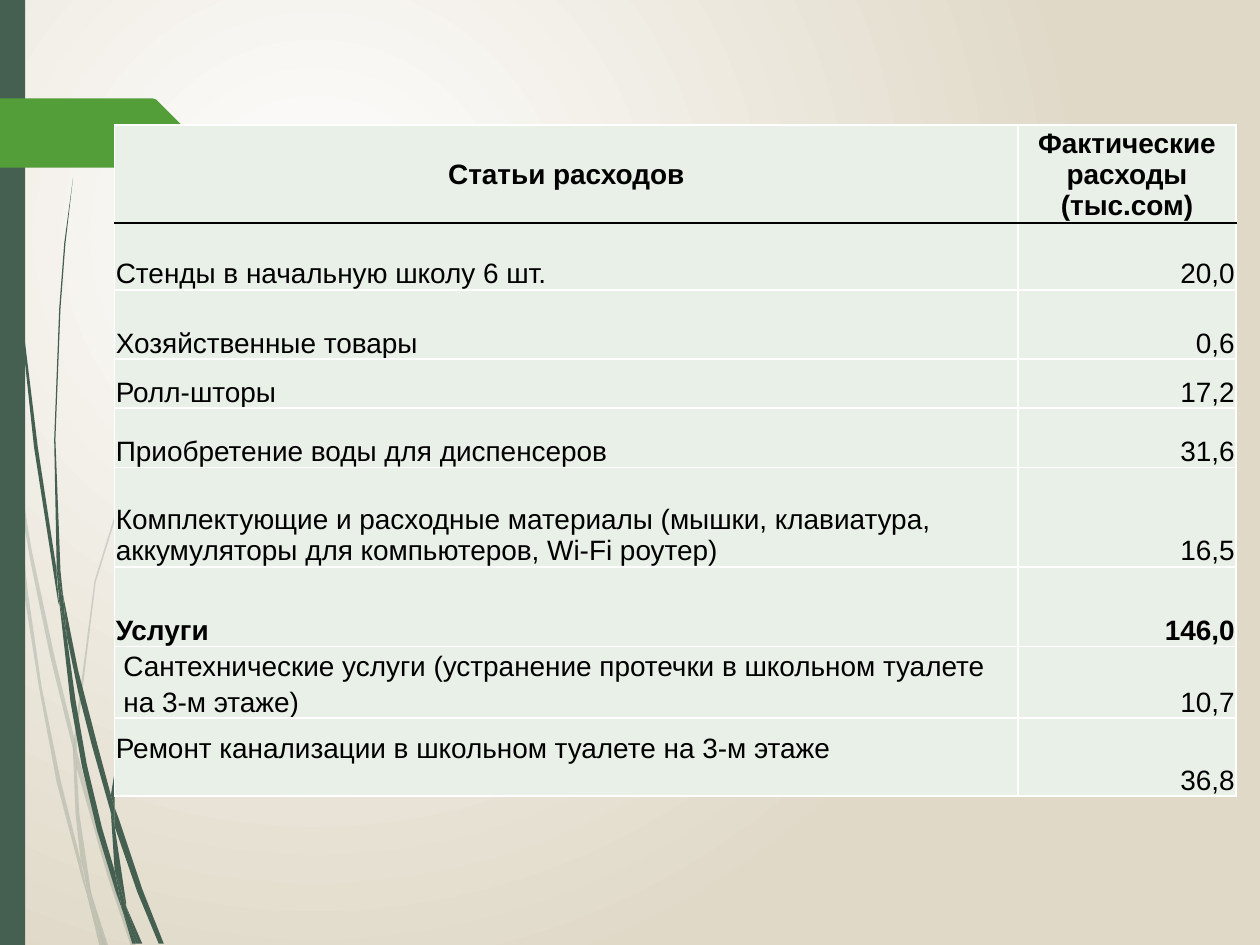
"""Builds a school expense table on a slide decorated with grass blades."""
from lxml import etree
from pptx import Presentation
from pptx.dml.color import RGBColor
from pptx.enum.shapes import MSO_SHAPE
from pptx.enum.text import MSO_ANCHOR, PP_ALIGN
from pptx.oxml.ns import qn
from pptx.util import Inches, Pt

RECTANGLE = MSO_SHAPE.RECTANGLE
MIDDLE, BOTTOM = MSO_ANCHOR.MIDDLE, MSO_ANCHOR.BOTTOM
LEFT, CENTER, RIGHT = PP_ALIGN.LEFT, PP_ALIGN.CENTER, PP_ALIGN.RIGHT
WHITE = RGBColor(0xFF, 0xFF, 0xFF)
BLACK = RGBColor(0x00, 0x00, 0x00)
SAND = RGBColor(0xE0, 0xD9, 0xC8)
PINE = RGBColor(0x45, 0x5F, 0x51)
GREEN = RGBColor(0x54, 0x9E, 0x39)
MINT = RGBColor(0xE9, 0xF0, 0xE8)

PALE_BLADES = [
    [(0.08, 3.5), (0.06, 3.22), (0, 2.82), (0, 2.99), (0.07, 3.44)],
    [(0.4, 5.22), (0.59, 5.99), (0.59, 5.86), (0.43, 5.2), (0.25, 4.36),
     (0.1, 3.45), (0.12, 3.76), (0.25, 4.5)],
    [(0.64, 6.07), (0.61, 5.96), (0.61, 6.1), (0.85, 6.94), (1.04, 7.51),
     (1.08, 7.51), (0.88, 6.92)],
    [(0.83, 7.51), (0.86, 7.51), (0.73, 7.11)],
    [(0.64, 6.83), (0.48, 6.19), (0.33, 5.45), (0.22, 4.69), (0.12, 3.76),
     (0.08, 3.5), (0.19, 4.7), (0.31, 5.46), (0.45, 6.21), (0.64, 6.93),
     (0.7, 7.14), (0.69, 7.07)],
    [(0.58, 5.99), (0.6, 6.46), (0.64, 6.83), (0.67, 6.92), (0.73, 7.11),
     (0.72, 7.06), (0.63, 6.46), (0.61, 6.1), (0.61, 6.08)],
    [(0.61, 5.84), (0.76, 4.62), (1.11, 3.49), (1.59, 2.45), (1.87, 1.98),
     (2.01, 1.75), (2.17, 1.54), (2.17, 1.53), (2.01, 1.75), (1.86, 1.97),
     (1.58, 2.44), (1.1, 3.48), (0.75, 4.61), (0.59, 5.84), (0.59, 5.86),
     (0.61, 5.96)],
    [(0.7, 7.14), (0.79, 7.51), (0.82, 7.51)],
    [(0.61, 6.08), (0.61, 6.1), (0.61, 5.96), (0.59, 5.86), (0.58, 5.99)],
    [(0.67, 6.92), (0.65, 6.83), (0.69, 7.07), (0.7, 7.14), (0.82, 7.51),
     (0.83, 7.51), (0.73, 7.11)],
]
DARK_BLADES = [
    [(0.05, 1.1), (0.14, 2.33), (0.27, 3.55), (0.46, 4.77), (0.47, 4.81),
     (0.45, 4.57), (0.45, 4.53), (0.3, 3.55), (0.15, 2.32), (0.06, 1.09),
     (0.04, 0.48), (0.03, 0), (0.02, 0), (0.03, 0.48)],
    [(0.73, 5.92), (0.88, 6.45), (0.88, 6.33), (0.88, 6.31), (0.77, 5.9),
     (0.62, 5.32), (0.5, 4.72), (0.53, 5.05), (0.62, 5.49)],
    [(0.94, 6.49), (0.91, 6.41), (0.91, 6.56), (1.09, 7.08), (1.26, 7.49),
     (1.3, 7.49), (1.13, 7.06)],
    [(0.91, 6.91), (0.81, 6.57), (0.69, 6.07), (0.6, 5.56), (0.53, 5.05),
     (0.47, 4.77), (0.56, 5.57), (0.65, 6.08), (0.77, 6.59), (0.92, 7.08),
     (0.97, 7.22), (0.96, 7.17)],
    [(0.5, 4.72), (0.48, 4.53), (0.44, 3.49), (0.48, 2.45), (0.52, 1.93),
     (0.58, 1.41), (0.51, 1.93), (0.47, 2.45), (0.43, 3.49), (0.45, 4.49),
     (0.49, 4.72)],
    [(1.1, 7.49), (1.13, 7.49), (1, 7.19)],
    [(0.47, 4.77), (0.53, 5.05), (0.5, 4.72), (0.49, 4.72), (0.45, 4.49),
     (0.45, 4.53)],
    [(0.91, 6.33), (1.03, 5.52), (1.31, 4.76), (1.69, 4.06), (1.91, 3.74),
     (2.03, 3.59), (2.16, 3.44), (2.15, 3.44), (2.03, 3.58), (1.91, 3.73),
     (1.68, 4.05), (1.29, 4.74), (1.01, 5.51), (0.88, 6.31), (0.91, 6.41)],
    [(0.97, 7.22), (1.05, 7.49), (1.08, 7.49)],
    [(0.88, 6.45), (0.91, 6.91), (0.96, 7.06), (1, 7.19), (1, 7.16),
     (0.91, 6.56), (0.9, 6.51)],
    [(0.88, 6.45), (0.9, 6.51), (0.91, 6.56), (0.91, 6.41), (0.88, 6.31),
     (0.88, 6.33)],
    [(0.96, 7.06), (0.91, 6.91), (0.96, 7.17), (0.97, 7.22), (1.08, 7.49),
     (1.1, 7.49), (1, 7.19)],
]
ARROW_TAB = [(0, 0.78), (1.21, 0.78), (1.24, 0.79), (1.49, 1.04),
             (1.49, 1.07), (1.24, 1.32), (1.21, 1.33), (0, 1.33)]
EXPENSES = [
    ("Статьи расходов", "Фактические расходы (тыс.сом)"),
    ("Стенды в начальную школу 6 шт.", "20,0"),
    ("Хозяйственные товары", "0,6"),
    ("Ролл-шторы", "17,2"),
    ("Приобретение воды для диспенсеров", "31,6"),
    ("Комплектующие и расходные материалы (мышки, клавиатура, "
     "аккумуляторы для компьютеров, Wi-Fi роутер)", "16,5"),
    ("Услуги", "146,0"),
    ("Сантехнические услуги (устранение протечки в школьном туалете "
     "на 3-м этаже)", "10,7"),
    ("Ремонт канализации в школьном туалете на 3-м этаже", "36,8"),
]
COLUMN_WIDTHS = [7.17, 1.73]
ROW_HEIGHTS = [0.78, 0.53, 0.55, 0.39, 0.47, 0.79, 0.63, 0.57, 0.62]
BOLD_ROWS = (0, 6)
PLUMBING_ROW, SEWER_ROW = 7, 8


class SlideBuilder:
    def __init__(self, slide, font="Arial", size=16):
        self.slide, self.font, self.size = slide, font, size

    def background(self, inner, outer):
        fill = self.slide.background.fill
        fill.gradient()
        for stop, color in zip(fill.gradient_stops, (inner, outer)):
            stop.color.rgb = color
        gradient = self.slide.element.find(".//" + qn("a:gradFill"))
        for line in gradient.findall(qn("a:lin")):
            gradient.remove(line)
        circle = etree.SubElement(gradient, qn("a:path"), path="circle")
        etree.SubElement(circle, qn("a:fillToRect"),
                         l="50000", t="50000", r="100000", b="100000")

    def paint(self, shape, color, opacity=100):
        shape.shadow.inherit = False
        shape.fill.solid()
        shape.fill.fore_color.rgb = color
        shape.line.fill.background()
        if opacity < 100:
            tint = shape.element.spPr.find(".//" + qn("a:srgbClr"))
            etree.SubElement(tint, qn("a:alpha"), val=str(opacity * 1000))

    def rectangle(self, left, top, width, height, color):
        shape = self.slide.shapes.add_shape(
            RECTANGLE, Inches(left), Inches(top), Inches(width), Inches(height))
        self.paint(shape, color)

    def outline(self, points, color, opacity=100, shapes=None):
        corners = [(Inches(x), Inches(y)) for x, y in points]
        builder = (shapes or self.slide.shapes).build_freeform(*corners[0])
        builder.add_line_segments(corners[1:], close=True)
        self.paint(builder.convert_to_shape(), color, opacity)

    def blades(self, outlines, color, opacity=100):
        group = self.slide.shapes.add_group_shape()
        for points in outlines:
            self.outline(points, color, opacity, group.shapes)

    def border(self, cell, side, color):
        properties = cell._tc.get_or_add_tcPr()
        line = etree.SubElement(properties, qn("a:ln" + side), w=str(Pt(1)))
        fill = etree.SubElement(line, qn("a:solidFill"))
        etree.SubElement(fill, qn("a:srgbClr"), val=str(color))

    def cell(self, cell, text, bold, alignment, anchor, borders):
        for side, color in borders.items():
            self.border(cell, side, color)
        cell.fill.solid()
        cell.fill.fore_color.rgb = MINT
        cell.margin_left = cell.margin_right = cell.margin_top = Inches(0.01)
        cell.margin_bottom = 0
        cell.vertical_anchor = anchor
        paragraph = cell.text_frame.paragraphs[0]
        paragraph.alignment = alignment
        run = paragraph.add_run()
        run.text = text
        run.font.name, run.font.size = self.font, Pt(self.size)
        run.font.bold, run.font.color.rgb = bold, BLACK

    def table(self, left, top, widths, heights, rows):
        table = self.slide.shapes.add_table(
            len(rows), len(widths), Inches(left), Inches(top),
            Inches(sum(widths)), Inches(sum(heights))).table
        table.horz_banding = False
        for column, width in zip(table.columns, widths):
            column.width = Inches(width)
        for index, (texts, height) in enumerate(zip(rows, heights)):
            table.rows[index].height = Inches(height)
            header = index == 0
            borders = {"L": WHITE, "R": WHITE,
                       "T": BLACK if index == 1 else WHITE,
                       "B": BLACK if header else WHITE}
            for column, text in enumerate(texts):
                alignment = CENTER if header else (LEFT, RIGHT)[column]
                self.cell(table.cell(index, column), text, index in BOLD_ROWS,
                          alignment, MIDDLE if header else BOTTOM, borders)
        return table


def main():
    presentation = Presentation()
    presentation.slide_width, presentation.slide_height = Inches(10), Inches(7.5)
    slide = presentation.slides.add_slide(presentation.slide_layouts[6])
    builder = SlideBuilder(slide)
    builder.background(WHITE, SAND)
    builder.blades(PALE_BLADES, PINE, 20)
    builder.blades(DARK_BLADES, PINE)
    builder.rectangle(0, 0, 0.2, 7.5, PINE)
    builder.outline(ARROW_TAB, GREEN)
    table = builder.table(0.91, 0.99, COLUMN_WIDTHS, ROW_HEIGHTS, EXPENSES)
    plumbing = table.cell(PLUMBING_ROW, 0)
    plumbing.margin_left = plumbing.margin_right = Inches(0.07)
    plumbing.margin_top = 0
    plumbing.text_frame.paragraphs[0].line_spacing = 1.15
    table.cell(SEWER_ROW, 0).margin_bottom = Inches(0.25)
    presentation.save("out.pptx")


if __name__ == "__main__":
    main()
